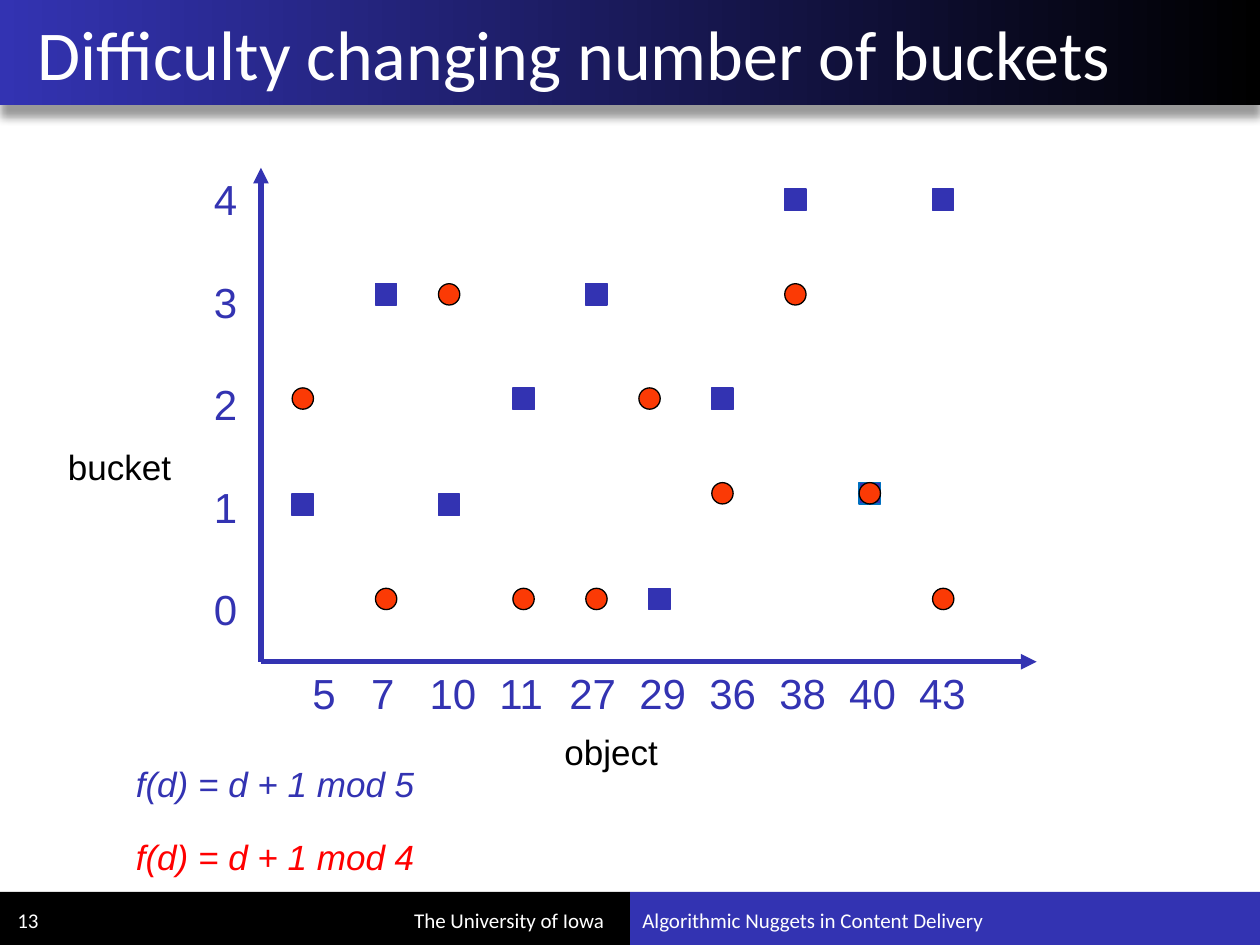
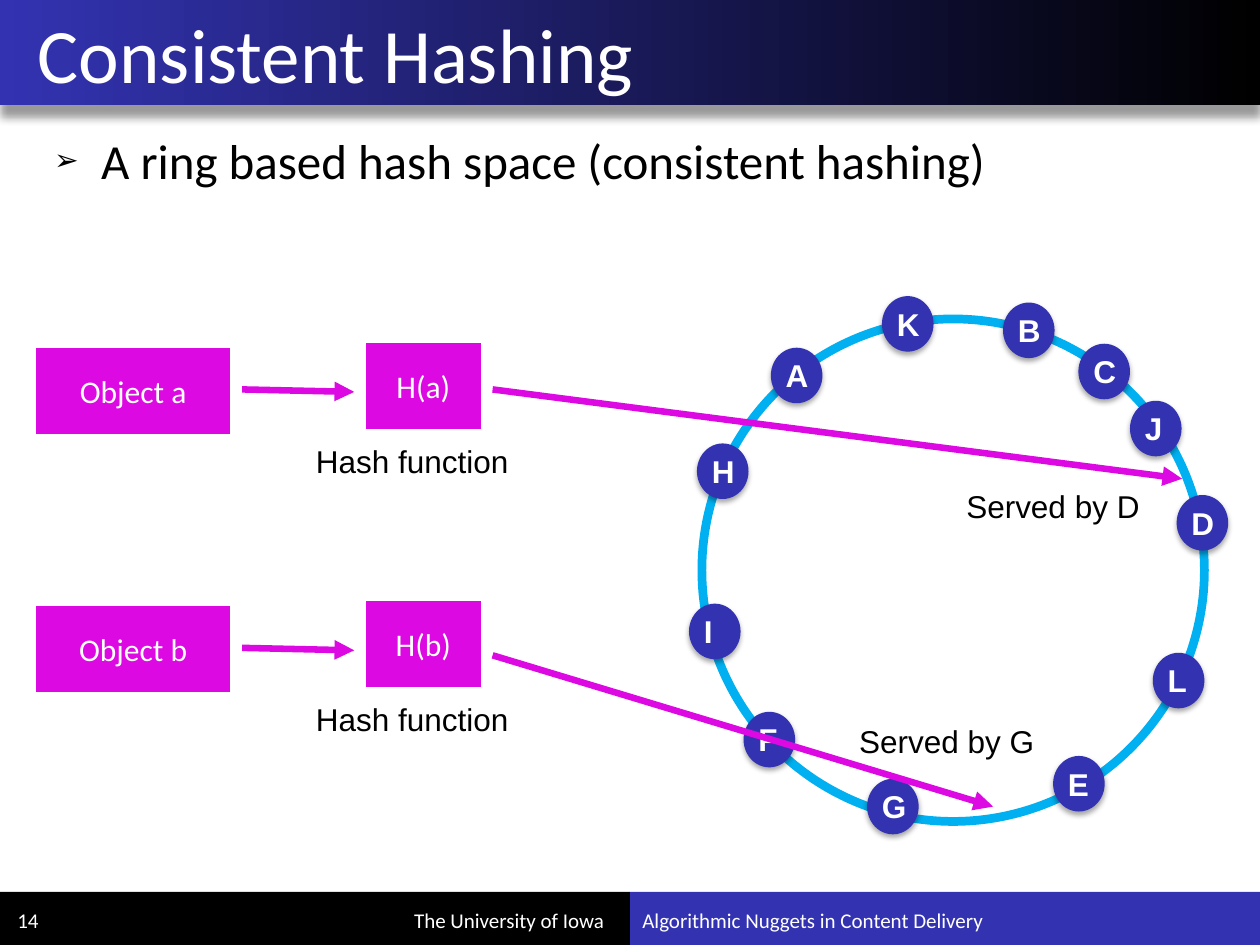
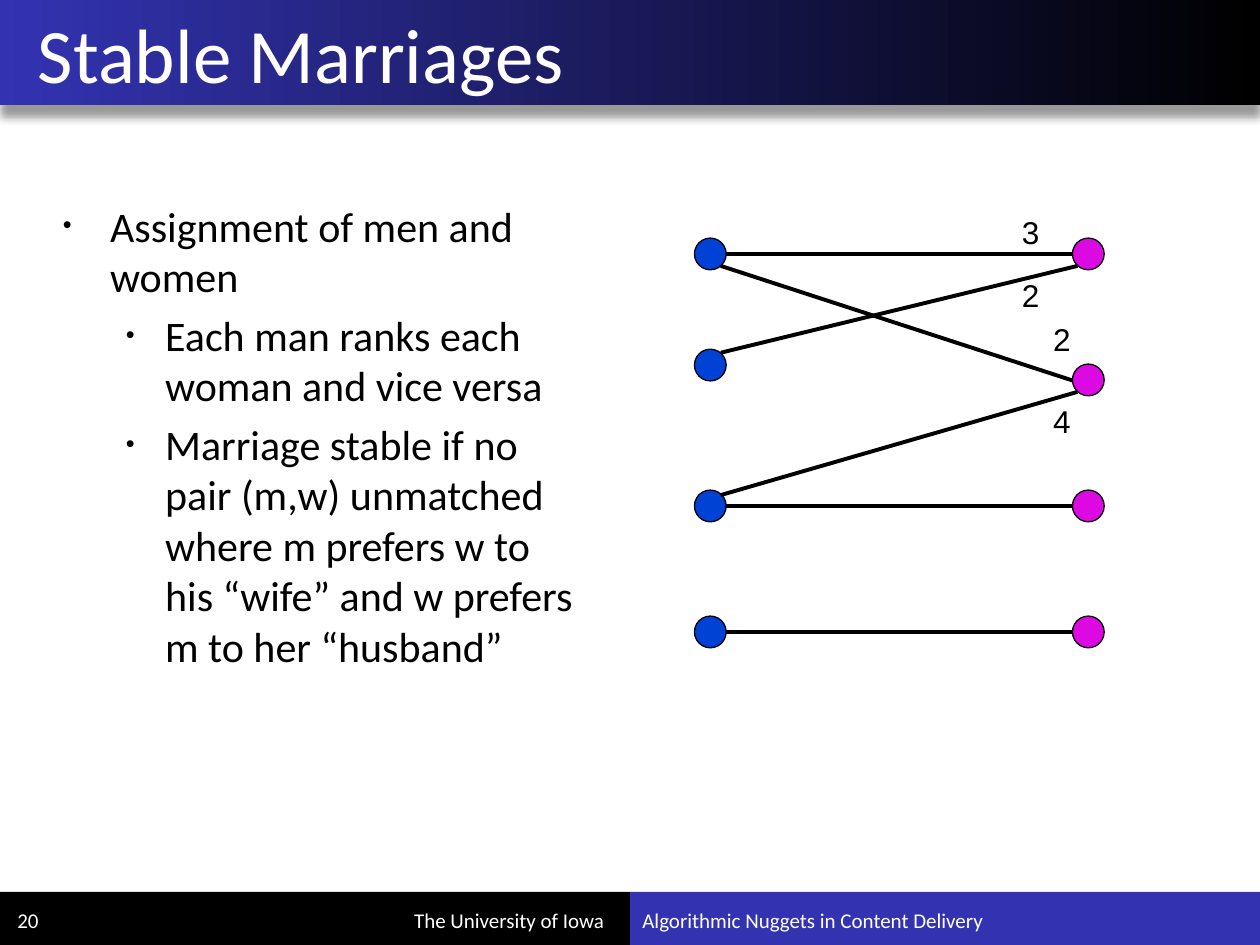
from lxml.etree import SubElement
from pptx import Presentation
from pptx.dml.color import RGBColor
from pptx.enum.shapes import MSO_CONNECTOR, MSO_SHAPE
from pptx.enum.text import MSO_ANCHOR, MSO_AUTO_SIZE, PP_ALIGN
from pptx.oxml.ns import qn
from pptx.util import Cm, Pt

BLUE, BLACK, WHITE = "3333B2", "000000", "FFFFFF"
MAGENTA, MAN_BLUE, ORANGE = "DD09E2", "0042D6", "FB3A05"
RED, RING_BLUE, EDGE_BLUE = "FF0000", "00B0F0", "0070C0"
RECT, OVAL = MSO_SHAPE.RECTANGLE, MSO_SHAPE.OVAL
HEADER_SHADOW, DISC_SHADOW = (40, 5, 7), (35, 3.1, 1.8)

SCHOOL = "The University of Iowa"
FOOTER = "Algorithmic Nuggets in Content Delivery"

OBJECT_X = {5: 5.89, 7: 7.57, 10: 8.84, 11: 10.34, 27: 11.81,
            29: 13.08, 36: 14.35, 38: 15.82, 40: 17.32, 43: 18.8}
BUCKET_Y = [11.86, 9.73, 7.82, 5.72, 3.81]
NUDGE = {(5, 5): (0, 0.23), (10, 5): (0, 0.23), (29, 4): (-0.2, 0)}
HASHES = [(5, RECT, BLUE, BLUE, BLUE, 15.24), (4, OVAL, ORANGE, BLACK, RED, 16.71)]
MARK = 0.43
AXES = [((5.26, 13.34), (5.26, 3.38)), ((5.26, 13.34), (20.9, 13.34))]
AXIS_NAMES = [("bucket", 1.12, 8.86, 2.62), ("object", 11.13, 14.6, 2.41)]
ONE_DIGIT_TAB, TWO_DIGIT_TAB = 1.18, 1.41

RING_TEXT = [(0, "A ring based hash space (consistent hashing)")]
SERVERS = {"K": (17.78, 5.97), "B": (20.22, 6.1), "C": (21.74, 6.93),
           "J": (22.78, 8.08), "D": (23.72, 9.98), "L": (23.24, 13.16),
           "E": (21.23, 15.24), "G": (17.48, 15.7), "F": (14.99, 14.35),
           "I": (13.89, 12.17), "H": (14.05, 8.94), "A": (15.54, 7.01)}
LOOKUPS = [
    ("a", 6.88, "D", (19.23, 9.7), (9.93, 7.85), (23.83, 9.65)),
    ("b", 12.09, "G", (17.07, 14.43), (9.93, 13.21), (20.02, 16.26)),
]

MARRIAGE_TEXT = [
    (0, "Assignment of men and women"),
    (1, "Each man ranks each woman and vice versa"),
    (1, "Marriage stable if no pair (m,w) unmatched where m prefers w to "
        "his “wife” and w prefers m to her “husband”"),
]
PEOPLE = [(14, MAN_BLUE, [4.8, 7.04, 9.88, 12.42]),
          (21.62, MAGENTA, [4.8, 7.34, 9.88, 12.42])]
PERSON = 0.64
COUPLE_Y = [5.12, 10.2, 12.74]
CROSSINGS = [((14.53, 7.11), (21.72, 5.36)), ((14.53, 9.98), (21.72, 7.9)),
             ((14.53, 5.36), (21.62, 7.67))]
RANKS = [("3", 20.35, 4.17), ("2", 20.35, 5.44), ("4", 20.98, 7.98), ("2", 20.98, 6.32)]


def rgb(color):
    return RGBColor.from_string(color)


def add_text(p, text, size, color, font="Arial", bold=None, italic=None):
    r = p.add_run()
    r.text = text
    r.font.name, r.font.size = font, Pt(size)
    r.font.bold, r.font.italic = bold, italic
    r.font.color.rgb = rgb(color)


def textbox(s, x, y, w, h, wrap=True, anchor=MSO_ANCHOR.TOP):
    tf = s.shapes.add_textbox(Cm(x), Cm(y), Cm(w), Cm(h)).text_frame
    tf.word_wrap = wrap
    tf.vertical_anchor = anchor
    return tf


def label(s, text, x, y, w, h, size, color=BLACK, wrap=False, bold=None, italic=None):
    tf = textbox(s, x, y, w, h, wrap)
    add_text(tf.paragraphs[0], text, size, color, bold=bold, italic=italic)


def small_print(s, text, x, w, align=PP_ALIGN.LEFT):
    p = textbox(s, x, 18.03, w, 1.02, anchor=MSO_ANCHOR.MIDDLE).paragraphs[0]
    p.alignment = align
    add_text(p, text, 12, WHITE, "Calibri")


def shape(s, kind, x, y, w, h, fill=None, line=None, width=0.75):
    sp = s.shapes.add_shape(kind, Cm(x), Cm(y), Cm(w), Cm(h))
    sp.shadow.inherit = False
    if fill:
        sp.fill.solid()
        sp.fill.fore_color.rgb = rgb(fill)
    else:
        sp.fill.background()
    if line:
        sp.line.color.rgb = rgb(line)
        sp.line.width = Pt(width)
    else:
        sp.line.fill.background()
    return sp


def drop_shadow(sp, alpha, blur, dist):
    effects = sp._element.spPr.find(qn("a:effectLst"))
    outer = SubElement(effects, qn("a:outerShdw"), blurRad=str(Pt(blur)),
                       dist=str(Pt(dist)), dir="5400000", rotWithShape="0")
    color = SubElement(outer, qn("a:srgbClr"), val=BLACK)
    SubElement(color, qn("a:alpha"), val=str(alpha * 1000))


def connect(s, start, end, color, width, arrow=False):
    c = s.shapes.add_connector(MSO_CONNECTOR.STRAIGHT, *map(Cm, start + end))
    c.line.color.rgb = rgb(color)
    c.line.width = Pt(width)
    if arrow:
        SubElement(c.line._get_or_add_ln(), qn("a:tailEnd"), type="triangle")
    SubElement(c._element.spPr, qn("a:effectLst"))


def bullets(s, items, char, size, x, y, w, h):
    tf = textbox(s, x, y, w, h)
    for i, (level, text) in enumerate(items):
        p = tf.add_paragraph() if i else tf.paragraphs[0]
        p.level = level
        margin, indent = ((0.95, -0.95), (2.06, -0.79))[level]
        pPr = p._p.get_or_add_pPr()
        pPr.set("marL", str(Cm(margin)))
        pPr.set("indent", str(Cm(indent)))
        SubElement(pPr, qn("a:buSzPct"), val="60000")
        SubElement(pPr, qn("a:buFont"), typeface="Arial")
        SubElement(pPr, qn("a:buChar"), char=char)
        if i:
            p.space_before = Pt(size * 0.2)
        add_text(p, text, size, BLACK, "Calibri")


def add_bands(s, layout):
    before = len(s.shapes)
    shape(s, RECT, 12.7, 17.98, 12.7, 1.07, BLUE)
    shape(s, RECT, 0, 17.98, 12.7, 1.07, BLACK)
    header = shape(s, RECT, 0, 0, 25.4, 2.11, BLUE)
    header.fill.gradient()
    header.fill.gradient_angle = 0
    for stop, color in zip(header.fill.gradient_stops, (BLUE, BLACK)):
        stop.color.rgb = rgb(color)
    drop_shadow(header, *HEADER_SHADOW)
    small_print(s, SCHOOL, 3.51, 8.92, PP_ALIGN.RIGHT)
    for sp in list(s.shapes)[before:]:
        layout.shapes._spTree.append(sp._element)


def new_slide(prs, title, number, size=44):
    layout = prs.slide_layouts[5]
    s = prs.slides.add_slide(layout)
    if len(prs.slides) == 1:
        add_bands(s, layout)
    sp = s.shapes.title
    sp.left, sp.top, sp.width, sp.height = Cm(0), Cm(0), Cm(24.77), Cm(2.11)
    tf = sp.text_frame
    tf.auto_size = MSO_AUTO_SIZE.NONE
    tf.vertical_anchor = MSO_ANCHOR.MIDDLE
    p = tf.paragraphs[0]
    p.alignment = PP_ALIGN.LEFT
    p._p.get_or_add_pPr().set("marL", str(Cm(0.51)))
    add_text(p, title, size, WHITE, "Calibri")
    small_print(s, FOOTER, 12.7, 10.8)
    small_print(s, str(number), 0.1, 2.97)
    return s


def buckets_slide(prs):
    s = new_slide(prs, "Difficulty changing number of buckets", 13, 40)
    for start, end in AXES:
        connect(s, start, end, BLUE, 3, arrow=True)

    p = textbox(s, 6.05, 13.34, 13.74, 1.27).paragraphs[0]
    tabs = SubElement(p._p.get_or_add_pPr(), qn("a:tabLst"))
    pos = 0
    for d in list(OBJECT_X)[:-1]:
        pos += ONE_DIGIT_TAB if d < 10 else TWO_DIGIT_TAB
        SubElement(tabs, qn("a:tab"), pos=str(Cm(pos)), algn="l")
    add_text(p, "\t".join(map(str, OBJECT_X)), 24, BLUE)

    tf = textbox(s, 4.06, 3.38, 0.99, 9.5, wrap=False)
    for i, bucket in enumerate(reversed(range(len(BUCKET_Y)))):
        p = tf.add_paragraph() if i else tf.paragraphs[0]
        if i:
            p.space_before = Pt(29.8)
        add_text(p, str(bucket), 24, BLUE)

    for text, x, y, w in AXIS_NAMES:
        label(s, text, x, y, w, 1.12, 20)
    for mod, kind, fill, line, color, y in HASHES:
        label(s, f"f(d) = d + 1 mod {mod}", 2.49, y, 6.15, 1.12, 20, color, italic=True)
        for d, x in OBJECT_X.items():
            dx, dy = NUDGE.get((d, mod), (0, 0))
            edge = EDGE_BLUE if (d, mod) == (40, 5) else line
            shape(s, kind, x + dx, BUCKET_Y[(d + 1) % mod] + dy, MARK, MARK, fill, edge)


def ring_slide(prs):
    s = new_slide(prs, "Consistent Hashing", 14)
    bullets(s, RING_TEXT, "➢", 28, 0.84, 2.51, 19.86, 10.16)
    shape(s, OVAL, 14.15, 6.43, 10.13, 10.13, line=RING_BLUE, width=5)
    for name, (x, y) in SERVERS.items():
        drop_shadow(shape(s, OVAL, x, y, 1.04, 1.12, BLUE), *DISC_SHADOW)
        label(s, name, x + 0.05, y + 0.05, 0.79, 1.02, 18, WHITE, wrap=True, bold=True)
    for name, y, server, served_at, start, end in LOOKUPS:
        for text, x, top, w in ((f"Object {name}", 0.69, y + 0.1, 3.99),
                                (f"H({name})", 7.34, y, 2.39)):
            tf = shape(s, RECT, x, top, w, 1.8, MAGENTA, WHITE, 2).text_frame
            tf.vertical_anchor = MSO_ANCHOR.MIDDLE
            p = tf.paragraphs[0]
            p.alignment = PP_ALIGN.CENTER
            add_text(p, text, 18, WHITE, "Calibri")
        connect(s, (4.88, y + 0.97), (7.14, y + 1.02), MAGENTA, 3.75, arrow=True)
        label(s, "Hash function", 6.12, y + 1.9, 4.42, 1.02, 18)
        label(s, f"Served by {server}", *served_at, 4.06, 1.02, 18, wrap=True)
        connect(s, start, end, MAGENTA, 3.75, arrow=True)


def marriages_slide(prs):
    s = new_slide(prs, "Stable Marriages", 20)
    bullets(s, MARRIAGE_TEXT, "•", 24, 1.02, 3.91, 10.8, 13.21)
    for x, fill, tops in PEOPLE:
        for y in tops:
            shape(s, OVAL, x, y, PERSON, PERSON, fill, BLACK)
    couples = [((14.63, y), (21.62, y)) for y in COUPLE_Y]
    for start, end in couples + CROSSINGS:
        connect(s, start, end, BLACK, 2.25)
    for text, x, y in RANKS:
        label(s, text, x, y, 0.86, 1.02, 18)


def main():
    prs = Presentation()
    prs.slide_width, prs.slide_height = Cm(25.4), Cm(19.05)
    buckets_slide(prs)
    ring_slide(prs)
    marriages_slide(prs)
    prs.save("out.pptx")


if __name__ == "__main__":
    main()
